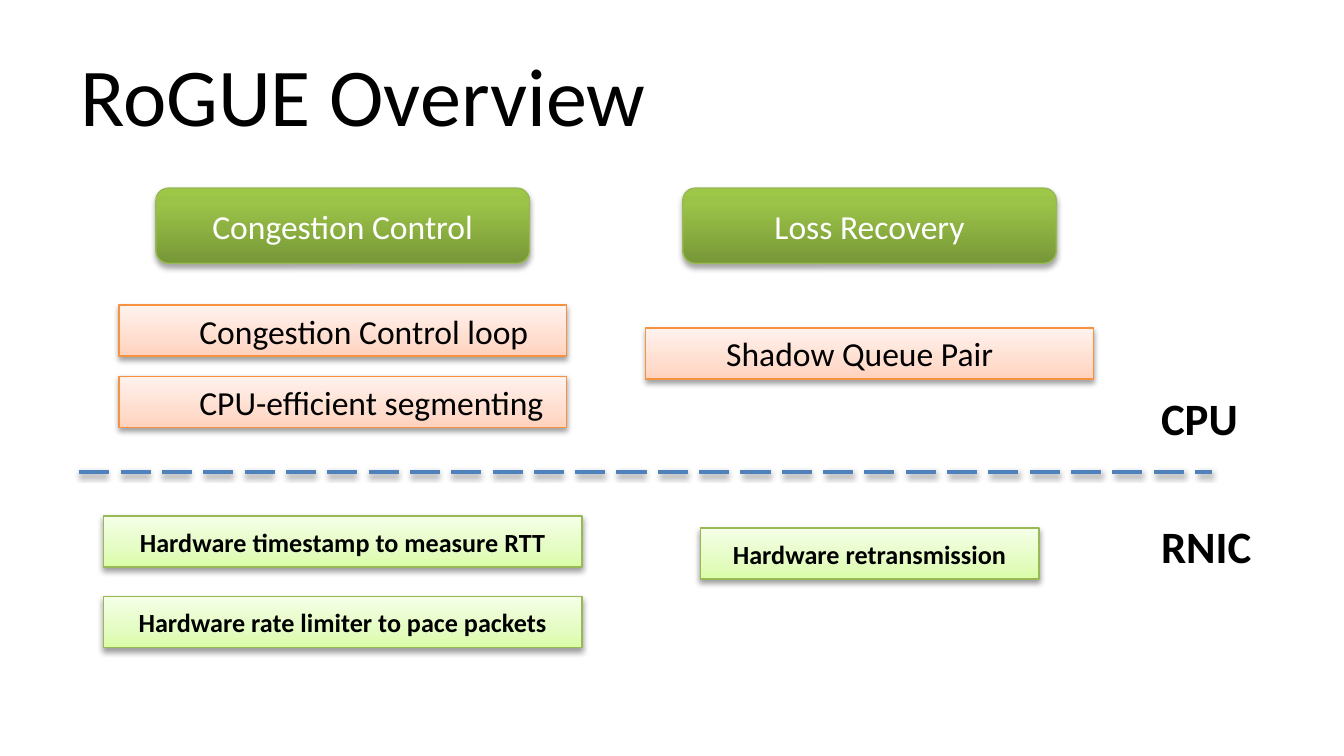
from lxml import etree
from pptx import Presentation
from pptx import util as u
from pptx.dml.color import RGBColor
from pptx.enum import dml, shapes, text
from pptx.oxml import ns

COLORS = {"ink": "000000", "white": "FFFFFF", "divider": "4F81BD",
          "green_line": "98B955", "orange_line": "F69240"}
GRADIENTS = {  # (position in %, colour), bottom to top
    "topic": [(0, "779737"), (80, "9BC348"), (100, "9DC746")],
    "cpu": [(0, "FFD2BD"), (35, "FFDED0"), (100, "FFF2ED")],
    "rnic": [(0, "DAFDA7"), (35, "E4FCC2"), (100, "F5FFE7")],
}
# kind: preset, height, line colour, text colour, size, bold, shadow opacity %, shadow distance
KINDS = {
    "topic": ("ROUNDED_RECTANGLE", 0.56, "green_line", "white", 18, False, 35, 1.8),
    "cpu": ("RECTANGLE", 0.38, "orange_line", "ink", 18, False, 38, 1.6),
    "rnic": ("RECTANGLE", 0.38, "green_line", "ink", 14, True, 38, 1.6),
}
CENTERS = [2.55, 6.47]  # the two columns: congestion control, loss recovery

# 16:9 slide
prs = Presentation()
prs.slide_width = u.Inches(10)
prs.slide_height = prs.slide_width * 9 // 16
s = prs.slides.add_slide(prs.slide_layouts[6])


def add_run(p, words, size, color, bold=False):
    r = p.add_run()
    r.text = words
    r.font.name, r.font.size, r.font.bold = "Calibri", u.Pt(size), bold
    r.font.color.rgb = RGBColor.from_string(COLORS[color])


def add_shadow(sp, opacity, distance):
    effects = etree.SubElement(sp._element.spPr, ns.qn("a:effectLst"))
    shadow = etree.SubElement(effects, ns.qn("a:outerShdw"), blurRad=str(u.Pt(3.1)),
                              dist=str(u.Pt(distance)), dir="5400000", rotWithShape="0")
    color = etree.SubElement(shadow, ns.qn("a:srgbClr"), val=COLORS["ink"])
    etree.SubElement(color, ns.qn("a:alpha"), val=str(opacity * 1000))


# Title and layer labels
for words, x, y, w, h, size, bold, anchor in [
    ("RoGUE Overview", 0.5, 0.23, 9, 0.94, 44, False, "MIDDLE"),
    ("CPU", 8.54, 2.86, 0.82, 0.5, 24, True, "TOP"),
    ("RNIC", 8.54, 3.81, 0.95, 0.5, 24, True, "TOP"),
]:
    tf = s.shapes.add_textbox(*map(u.Inches, (x, y, w, h))).text_frame
    tf.word_wrap = True
    tf.vertical_anchor = text.MSO_ANCHOR[anchor]
    add_run(tf.paragraphs[0], words, size, "ink", bold)

# Dashed divider between CPU and RNIC
divider = s.shapes.add_connector(shapes.MSO_CONNECTOR.STRAIGHT,
                                 *map(u.Inches, (0.59, 3.51, 9.02, 3.51)))
divider.line.color.rgb = RGBColor.from_string(COLORS["divider"])
divider.line.width = u.Pt(2)
divider.line.dash_style = dml.MSO_LINE.LONG_DASH
add_shadow(divider, 38, 1.6)

# Boxes: kind, column, top, width, words
for kind, col, y, w, words in [
    ("topic", 0, 1.4, 2.78, "Congestion Control"),
    ("cpu", 0, 2.27, 3.33, "Congestion Control loop"),
    ("cpu", 0, 2.8, 3.33, "CPU-efficient segmenting"),
    ("rnic", 0, 3.84, 3.56, "Hardware timestamp to measure RTT"),
    ("rnic", 0, 4.44, 3.56, "Hardware rate limiter to pace packets"),
    ("topic", 1, 1.4, 2.78, "Loss Recovery"),
    ("rnic", 1, 3.93, 2.52, "Hardware retransmission"),
    ("cpu", 1, 2.44, 3.33, "Shadow Queue Pair"),
]:
    preset, h, line, ink, size, bold, opacity, distance = KINDS[kind]
    sp = s.shapes.add_shape(shapes.MSO_SHAPE[preset],
                            *map(u.Inches, (CENTERS[col] - w / 2, y, w, h)))
    sp.fill.gradient()
    sp.fill.gradient_angle = 90
    stops = sp._element.spPr.find(".//" + ns.qn("a:gsLst"))
    stops[:] = []
    for pos, color in GRADIENTS[kind]:
        stop = etree.SubElement(stops, ns.qn("a:gs"), pos=str(pos * 1000))
        etree.SubElement(stop, ns.qn("a:srgbClr"), val=color)
    sp.line.color.rgb = RGBColor.from_string(COLORS[line])
    sp.line.width = u.Pt(0.75)
    add_shadow(sp, opacity, distance)

    tf = sp.text_frame
    tf.word_wrap = True
    tf.vertical_anchor = text.MSO_ANCHOR.MIDDLE
    p = tf.paragraphs[0]
    p.alignment = text.PP_ALIGN.CENTER
    if kind == "cpu":  # indented second-level text
        p.alignment, p.level = text.PP_ALIGN.LEFT, 1
        p._p.get_or_add_pPr().set("marL", str(u.Inches(0.5)))
    add_run(p, words, size, ink, bold)

prs.save("out.pptx")
